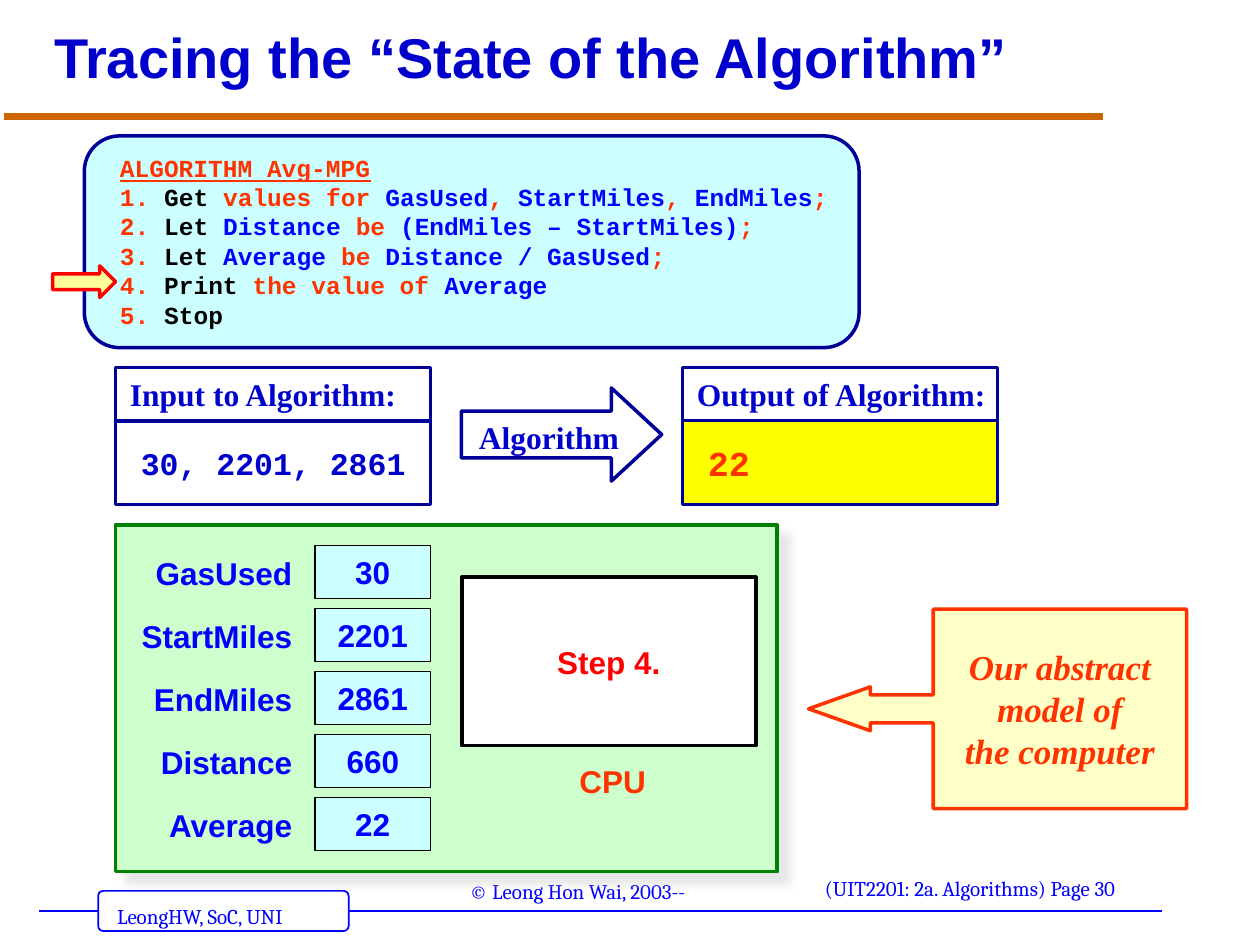
from dataclasses import dataclass

from lxml.etree import SubElement
from pptx import Presentation
from pptx.dml.color import RGBColor
from pptx.enum.shapes import MSO_CONNECTOR as Connector, MSO_SHAPE as Shape
from pptx.enum.text import MSO_ANCHOR as Anchor, MSO_AUTO_SIZE as AutoSize, PP_ALIGN as Align
from pptx.oxml.ns import qn
from pptx.util import Cm, Pt


@dataclass(frozen=True)
class Theme:
    title: str = "0000CC"
    blue: str = "0000FF"
    navy: str = "000099"
    orange: str = "FF3300"
    rule: str = "CC6600"
    red: str = "FF0000"
    black: str = "000000"
    white: str = "FFFFFF"
    aqua: str = "CCFFFF"
    mint: str = "CCFFCC"
    green: str = "008000"
    yellow: str = "FFFF00"
    cream: str = "FFFFC8"
    straw: str = "FFFF99"
    shade: str = "CECECE"
    sans: str = "Arial"
    serif: str = "Times New Roman"
    mono: str = "Courier New"
    footer: str = "Cambria"
    title_size: int = 32
    large: int = 20
    body: int = 18
    code: int = 14
    small: int = 12


theme = Theme()

TITLE = "Tracing the “State of the Algorithm”"
FOOTERS = [
    ("LeongHW, SoC, UNI", 2.11, 18.08, 4.52),
    ("(UIT2201: 2a. Algorithms) Page 30", 16.38, 17.53, 7.01),
    ("© Leong Hon Wai, 2003--", 9.22, 17.58, 5.23),
]
PLAIN, WORD, NAME = theme.orange, theme.black, theme.blue
HEADING = "ALGORITHM Avg-MPG"
STEPS = [
    [("Get", WORD), (" values for ", PLAIN), ("GasUsed", NAME), (", ", PLAIN),
     ("StartMiles", NAME), (", ", PLAIN), ("EndMiles", NAME), (";", PLAIN)],
    [("Let ", WORD), ("Distance", NAME), (" be ", PLAIN),
     ("(EndMiles – StartMiles)", NAME), (";", PLAIN)],
    [("Let ", WORD), ("Average", NAME), (" be ", PLAIN),
     ("Distance / GasUsed", NAME), (";", PLAIN)],
    [("Print", WORD), (" the value of ", PLAIN), ("Average", NAME)],
    [("Stop", WORD)],
]
VARIABLES = [("GasUsed", "30"), ("StartMiles", "2201"), ("EndMiles", "2861"),
             ("Distance", "660"), ("Average", "22")]
PANELS = [
    ("Input to Algorithm:", "30, 2201, 2861", 2.33, None, theme.title, theme.body),
    ("Output of Algorithm:", "22", 13.76, theme.yellow, theme.orange, theme.large),
]
CALLOUT = ["Our abstract", "model of", "the computer"]


def colour(value):
    return RGBColor.from_string(value)


def write(box, lines, *, font=theme.sans, size=theme.body, color=theme.blue, bold=True,
          italic=False, align=Align.LEFT, anchor=Anchor.TOP, wrap=True, grow=False,
          left=0.25, right=0.25, spacing=None):
    frame = box.text_frame
    frame.word_wrap = wrap
    frame.auto_size = AutoSize.SHAPE_TO_FIT_TEXT if grow else AutoSize.NONE
    frame.vertical_anchor = anchor
    frame.margin_left, frame.margin_right = Cm(left), Cm(right)
    frame.margin_top = frame.margin_bottom = Cm(0.13)
    for index, line in enumerate([lines] if isinstance(lines, str) else lines):
        para = frame.add_paragraph() if index else frame.paragraphs[0]
        para.alignment = align
        para.line_spacing = spacing
        for text, tint in [(line, color)] if isinstance(line, str) else line:
            span = para.add_run()
            span.text = text
            span.font.name, span.font.size = font, Pt(size)
            span.font.bold, span.font.italic = bold, italic
            span.font.color.rgb = colour(tint)
    return frame


def add_box(parent, kind, place, fill, line, width, adjust=()):
    box = parent.shapes.add_shape(kind, *map(Cm, place))
    box.shadow.inherit = False
    if fill:
        box.fill.solid()
        box.fill.fore_color.rgb = colour(fill)
    else:
        box.fill.background()
    box.line.color.rgb = colour(line)
    box.line.width = Pt(width)
    for index, value in enumerate(adjust):
        box.adjustments[index] = value
    return box


def add_label(parent, place, text, **style):
    return write(parent.shapes.add_textbox(*map(Cm, place)), text, **style)


def add_line(page, start, end, color, width):
    line = page.shapes.add_connector(Connector.STRAIGHT, *map(Cm, start + end))
    line.line.color.rgb = colour(color)
    line.line.width = Pt(width)
    SubElement(line._element.spPr, qn("a:effectLst"))


def cast_shadow(box):
    effects = box._element.spPr.find(qn("a:effectLst"))
    shadow = SubElement(effects, qn("a:outerShdw"), blurRad=str(Pt(5)), dist=str(Pt(8.5)),
                        dir=str(45 * 60000), algn="tl", rotWithShape="0")
    tint = SubElement(shadow, qn("a:srgbClr"), val=theme.shade)
    SubElement(tint, qn("a:alpha"), val="50000")


def add_frame(page):
    add_line(page, (0.79, 18.36), (23.42, 18.36), theme.blue, 1)
    add_box(page, Shape.ROUNDED_RECTANGLE, (1.98, 17.96, 5.05, 0.81),
            theme.white, theme.blue, 1, [0.125])
    add_line(page, (0.08, 2.34), (22.23, 2.34), theme.rule, 4)
    for text, left, top, width in FOOTERS:
        add_label(page, (left, top, width, 0.76), text, font=theme.footer,
                  size=theme.small, bold=False, wrap=False, grow=True)
    add_label(page, (0.84, 0.05, 22.76, 2.34), TITLE, size=theme.title_size,
              color=theme.title, anchor=Anchor.MIDDLE, spacing=0.9)


def add_algorithm(page):
    box = add_box(page, Shape.ROUNDED_RECTANGLE, (1.7, 2.74, 15.62, 4.27),
                  theme.aqua, theme.navy, 2, [0.167])
    steps = [[(f"{number}. ", PLAIN)] + step for number, step in enumerate(STEPS, 1)]
    frame = write(box, [HEADING] + steps, font=theme.mono, size=theme.code,
                  color=PLAIN, left=0.51, right=0.13, grow=True)
    frame.paragraphs[0].runs[0].font.underline = True


def add_computer(page):
    group = page.shapes.add_group_shape()
    cast_shadow(add_box(group, Shape.RECTANGLE, (2.33, 10.58, 13.34, 6.99),
                        theme.mint, theme.green, 2.25))
    centred = dict(align=Align.CENTER, anchor=Anchor.MIDDLE, wrap=False)
    for row, (name, value) in enumerate(VARIABLES):
        top = 11 + 1.27 * row
        add_label(group, (2.33, top + 0.04, 3.81, 1.02), name, align=Align.RIGHT, grow=True)
        cell = add_box(group, Shape.RECTANGLE, (6.35, top, 2.33, 1.06),
                       theme.aqua, theme.black, 0.75)
        write(cell, value, **centred)
    processor = add_box(group, Shape.RECTANGLE, (9.31, 11.64, 5.93, 3.39),
                        theme.white, theme.black, 2.25)
    write(processor, "Step 4.", color=theme.red, **centred)
    add_label(group, (11.43, 15.24, 1.85, 1.02), "CPU", color=theme.orange,
              wrap=False, grow=True)


def add_panels(page):
    for heading, value, left, fill, color, size in PANELS:
        group = page.shapes.add_group_shape()
        head = add_box(group, Shape.RECTANGLE, (left, 7.41, 6.35, 1.08), None, theme.navy, 2)
        write(head, heading, font=theme.serif, color=theme.title,
              anchor=Anchor.MIDDLE, left=0.29, right=0.13)
        body = add_box(group, Shape.RECTANGLE, (left, 8.48, 6.35, 1.69), fill, theme.navy, 2)
        write(body, value, font=theme.mono, size=size, color=color,
              anchor=Anchor.MIDDLE, left=0.51, right=0.13)


def add_arrows(page):
    flow = add_box(page, Shape.RIGHT_ARROW, (9.3, 7.82, 4.04, 1.88),
                   None, theme.navy, 2, [0.5, 0.54])
    write(flow, "Algorithm", font=theme.serif, color=theme.title, align=Align.CENTER,
          wrap=False, left=0.51, right=0.51)
    callout = add_box(page, Shape.LEFT_ARROW_CALLOUT, (16.3, 12.28, 7.62, 4.02),
                      theme.cream, theme.orange, 2, [0.14, 0.11, 0.31, 0.67])
    write(callout, CALLOUT, font=theme.serif, size=theme.large, color=theme.orange,
          italic=True, align=Align.CENTER, anchor=Anchor.MIDDLE, wrap=False,
          left=0.13, right=0.13)
    add_box(page, Shape.RIGHT_ARROW, (1.06, 5.36, 1.27, 0.64),
            theme.straw, theme.red, 2, [0.5, 0.5])


def main():
    deck = Presentation()
    deck.slide_width, deck.slide_height = Cm(25.4), Cm(19.05)
    page = deck.slides.add_slide(deck.slide_layouts[6])
    for build in (add_frame, add_algorithm, add_computer, add_panels, add_arrows):
        build(page)
    deck.save("out.pptx")


if __name__ == "__main__":
    main()
